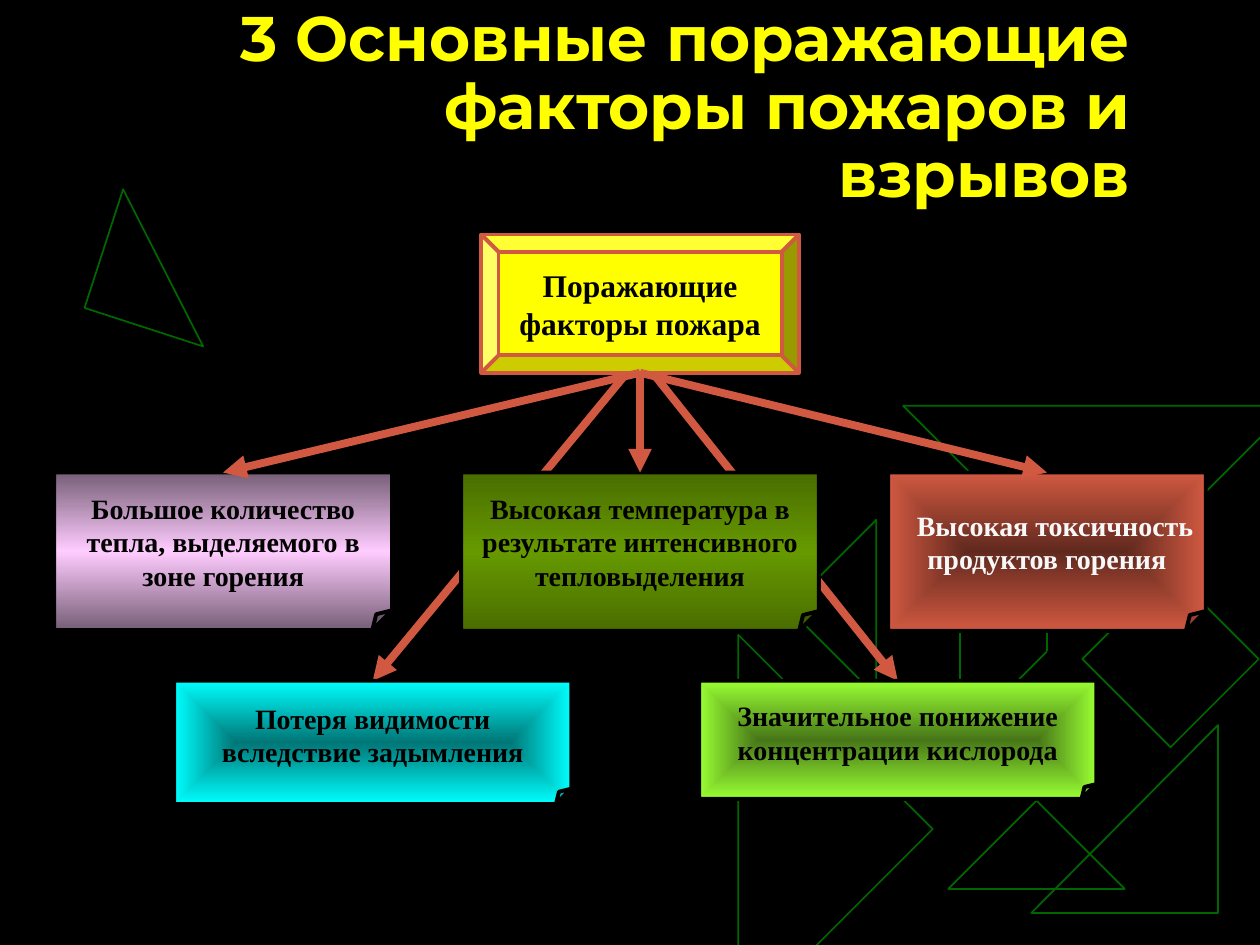
import pptx
import pptx.util
import pptx.dml.color
import pptx.oxml
import pptx.oxml.ns
import pptx.enum.shapes
import pptx.enum.text

Pt = pptx.util.Pt
qn = pptx.oxml.ns.qn
SHAPE = pptx.enum.shapes.MSO_SHAPE
ALIGN = pptx.enum.text.PP_ALIGN
MIDDLE = pptx.enum.text.MSO_ANCHOR.MIDDLE
STRAIGHT = pptx.enum.shapes.MSO_CONNECTOR.STRAIGHT

COLORS = {
    "back": "000000", "decor": "006600", "title": "FFFF00", "root": "FFFF00",
    "arrow": "D15941", "dark": "000000", "light": "F8F8F8",
}
FONTS = {"title": "Montserrat", "body": "Times New Roman"}

# Content
TITLE = "3 Основные поражающие факторы пожаров и взрывов"
ROOT = ("Поражающие факторы пожара", (275, 134, 181.5, 79))
ROW_TOPS = (270, 389)
C, R = ALIGN.CENTER, ALIGN.RIGHT
# row, left, width, height, gradient kind, gradient colours, text colour, lines
FACTORS = [
    (0, 31, 193, 90, "linear", ("765E76", "FFCCFF", "765E76"), "dark",
     [("Большое количество тепла, выделяемого в зоне горения", C)]),
    (0, 507.5, 181.5, 90.5, "rect", ("61291E", "D15941"), "light",
     [("Высокая токсичность", R), ("продуктов горения", C)]),
    (1, 99.5, 227, 70.5, "rect", ("007676", "00FFFF"), "dark",
     [("Потеря видимости", C), ("вследствие задымления", C)]),
    (1, 399.5, 227, 67.5, "rect", ("477618", "99FF33"), "dark",
     [("Значительное понижение", C), ("концентрации кислорода", C)]),
    (0, 263.5, 204.5, 90.5, "linear", ("496D00", "669900", "496D00"), "dark",
     [("Высокая температура в результате интенсивного", C), ("тепловыделения", C)]),
]

# Background ornament: shape, left, top, width, height, rotation, mirrored
TRI = SHAPE.RIGHT_TRIANGLE
ORNAMENT = [
    (TRI, 57.6, 117.4, 71.3, 71.3, 108, True),
    (TRI, 556.6, 472.3, 71.3, 71.3, 225, True),
    (TRI, 589, 414.7, 107.3, 106.6, 270, False),
    (SHAPE.DIAMOND, 618.5, 326.2, 100.8, 100.8, 0, False),
    (TRI, 343.4, 395.3, 157, 157, 225, False),
    (TRI, 465.1, 311.8, 71.3, 71.3, 135, True),
    (TRI, 548.6, 153.4, 157, 157, 315, False),
]
ORNAMENT_LINES = [
    (598.3, 274.3, 598.3, 372.2), (548.6, 322.6, 548.6, 422.6),
    (548.6, 421.9, 598.3, 372.2), (547.9, 323.3, 598.3, 272.9),
]


def rgb(value):
    return pptx.dml.color.RGBColor.from_string(value)


def xml(body):
    name, rest = body.split(" ", 1)
    return pptx.oxml.parse_xml(f"{name} {pptx.oxml.ns.nsdecls('a')} {rest}")


def set_line(s, color, width):
    s.line.color.rgb = rgb(color)
    s.line.width = Pt(width)


def add_shape(kind, box, line, width):
    s = shapes.add_shape(kind, *map(Pt, box))
    s.shadow.inherit = False
    s.fill.background()
    set_line(s, line, width)
    return s


def add_line(ends, color, width):
    s = shapes.add_connector(STRAIGHT, *map(Pt, ends))
    set_line(s, color, width)
    s._element.spPr.append(xml("<a:effectLst />"))
    return s


def add_arrow(x1, y1, x2, y2, target):
    s = add_line((x1, y1, x2, y2), COLORS["arrow"], 4.5)
    s.end_connect(target, 0)
    s._element.spPr.find(qn("a:ln")).append(xml('<a:tailEnd type="triangle"/>'))
    return s


def set_fold(s):
    geometry = s._element.spPr.find(qn("a:prstGeom"))
    geometry.find(qn("a:avLst")).append(xml('<a:gd name="adj" fmla="val 12500"/>'))


def set_gradient(s, kind, colors):
    last = len(colors) - 1
    stops = "".join(
        f'<a:gs pos="{100000 * i // last}"><a:srgbClr val="{c}"/></a:gs>'
        for i, c in enumerate(colors))
    if kind == "linear":
        shade = '<a:lin ang="5400000" scaled="0"/>'
    else:
        shade = ('<a:path path="rect"><a:fillToRect l="50000" t="50000" '
                 'r="50000" b="50000"/></a:path>')
    sp_pr = s._element.spPr
    sp_pr.replace(sp_pr.find(qn("a:noFill")), xml(
        f'<a:gradFill rotWithShape="1"><a:gsLst>{stops}</a:gsLst>{shade}</a:gradFill>'))


def set_text(s, lines, font, size, color):
    tf = s.text_frame
    tf.word_wrap = True
    tf.vertical_anchor = MIDDLE
    tf.text = "\n".join(text for text, _ in lines)
    for p, (_, align) in zip(tf.paragraphs, lines):
        p.alignment = align
        for r in p.runs:
            r.font.name, r.font.size, r.font.bold = font, Pt(size), True
            r.font.color.rgb = rgb(color)


prs = pptx.Presentation()
prs.slide_width, prs.slide_height = Pt(720), Pt(540)
slide = prs.slides.add_slide(prs.slide_layouts[5])
shapes = slide.shapes
slide.background.fill.solid()
slide.background.fill.fore_color.rgb = rgb(COLORS["back"])

# Ornament
for kind, *box, angle, mirrored in ORNAMENT:
    s = add_shape(kind, box, COLORS["decor"], 1)
    s.rotation = angle
    if mirrored:
        s._element.spPr.find(qn("a:xfrm")).set("flipH", "1")
for ends in ORNAMENT_LINES:
    s = add_line(ends, COLORS["decor"], 1)
ornament_end = s._element

# Root box
text, box = ROOT
root = add_shape(SHAPE.BEVEL, box, COLORS["arrow"], 2.25)
root.fill.solid()
root.fill.fore_color.rgb = rgb(COLORS["root"])
set_text(root, [(text, C)], FONTS["body"], 18, COLORS["dark"])
root_x = box[0] + box[2] / 2
root_bottom = box[1] + box[3]

# Factor boxes
placed = []
for row, left, width, height, kind, colors, ink, lines in FACTORS:
    s = add_shape(SHAPE.FOLDED_CORNER, (left, ROW_TOPS[row], width, height),
                  COLORS["back"], 2.25)
    set_fold(s)
    set_gradient(s, kind, colors)
    set_text(s, lines, FONTS["body"], 16, COLORS[ink])
    placed.append((s, row, left + width / 2))

# Arrows: those to the lower row run behind the boxes
for target, row, x in placed:
    start = root_bottom - 9 if row else root_bottom
    s = add_arrow(root_x, start, x, ROW_TOPS[row], target)
    if row:
        ornament_end.addnext(s._element)
    else:
        s.begin_connect(root, 2)

# Title
title = shapes.title
title.left, title.top, title.width, title.height = map(Pt, (95, 12, 558, 101))
set_text(title, [(TITLE, R)], FONTS["title"], 36, COLORS["title"])
title.text_frame.auto_size = pptx.enum.text.MSO_AUTO_SIZE.NONE
title.text_frame.paragraphs[0].line_spacing = 0.9
shapes._spTree.append(title._element)

prs.save("out.pptx")
